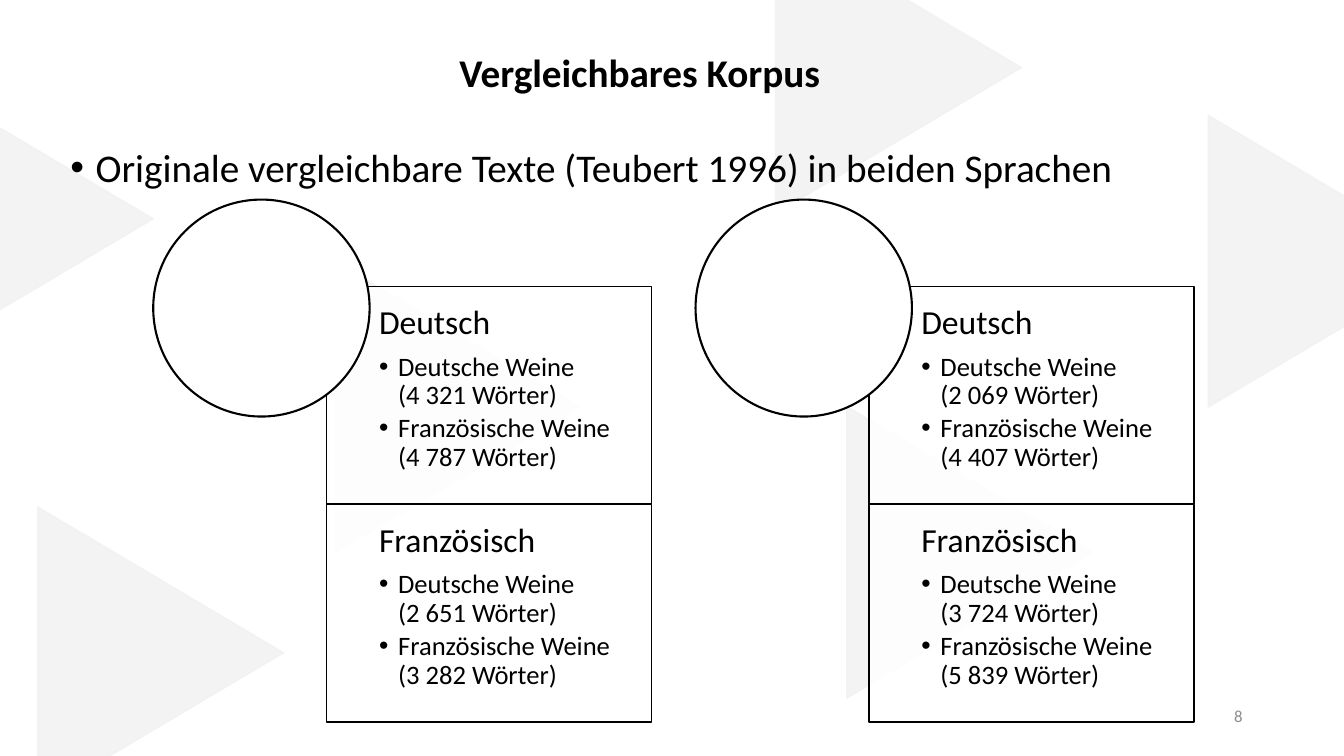
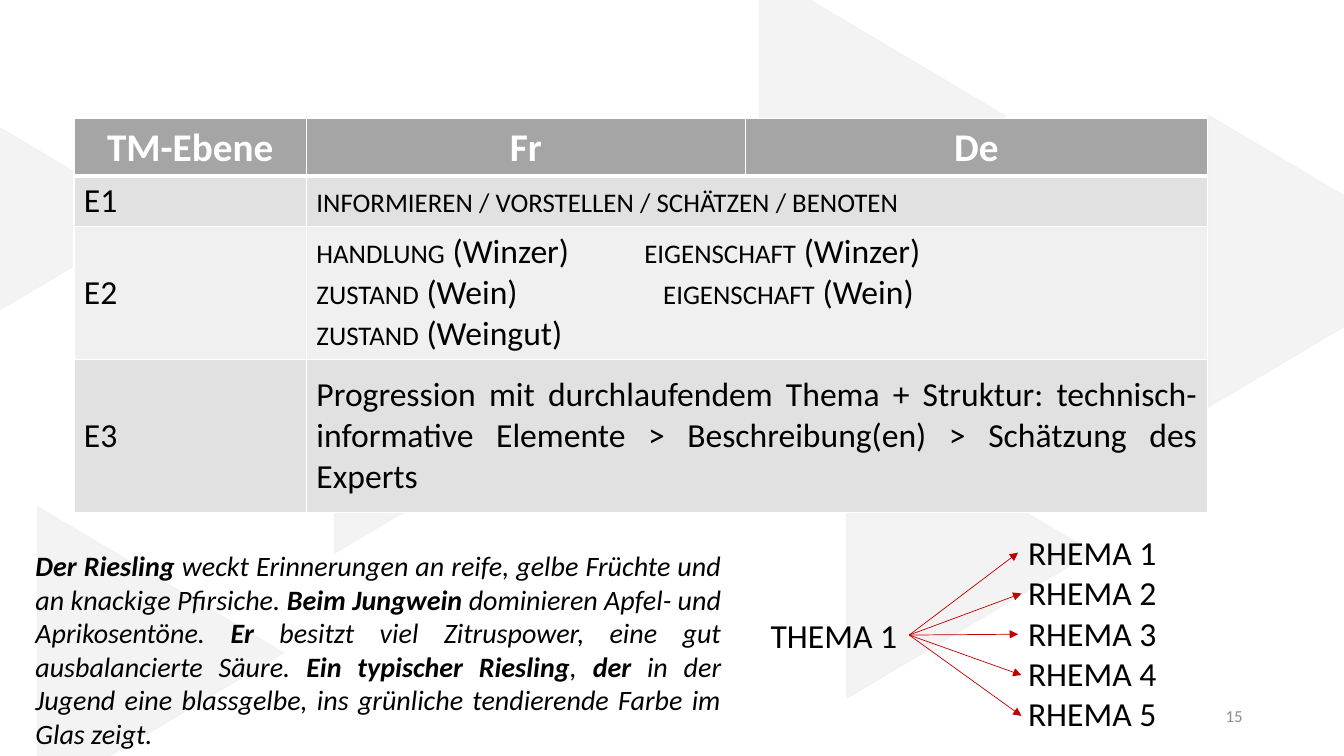
from lxml import etree
from pptx import Presentation
from pptx import util as u
from pptx.dml import color
from pptx.enum import shapes, text
from pptx.oxml import ns

COLORS = {
    "black": "000000",
    "white": "FFFFFF",
    "triangle": "D9D9D9",
    "triangle edge": "F2F2F2",
    "number": "8C8C8C",
    "header": "A5A5A5",
    "dark band": "E1E1E1",
    "light band": "F0F0F0",
    "arrow": "C00000",
}
ALIGN = text.PP_ALIGN
SHAPE = shapes.MSO_SHAPE
TITLE_ONLY, BLANK = 5, 6


def rgb(name):
    return color.RGBColor.from_string(COLORS[name])


def add_xml(parent, tag, **attributes):
    return etree.SubElement(parent, ns.qn(tag), **attributes)


class Deck:
    """Style and current slide; all lengths are percentages of the slide's size."""

    font = "Calibri"
    triangles = [(1.1, 70.1), (61.3, 56.8), (23.2, 37.6), (88.2, 18.3), (-8.6, 12.7)]

    def __init__(self):
        self.presentation = Presentation()
        self.presentation.slide_width = u.Inches(13.33)
        self.presentation.slide_height = u.Inches(7.5)
        self.slide = None

    def x(self, share):
        return u.Emu(round(self.presentation.slide_width * share / 100))

    def y(self, share):
        return u.Emu(round(self.presentation.slide_height * share / 100))

    def area(self, left, top, width, height):
        return self.x(left), self.y(top), self.x(width), self.y(height)

    # Slide with background triangles, number and optional title
    def new_slide(self, number, top_triangle, title=None):
        layout = self.presentation.slide_layouts[TITLE_ONLY if title else BLANK]
        self.slide = self.presentation.slides.add_slide(layout)
        for left, top in [top_triangle, *self.triangles]:
            triangle = self.shape(SHAPE.ISOSCELES_TRIANGLE, (left, top, 21.7, 32.5),
                                  "triangle", "triangle edge", opacity=30)
            triangle.rotation = 90
        self.text_box((70.7, 92.7, 22.5, 5.3), [str(number)], 12, "number", ALIGN.RIGHT)
        if title:
            self.title(title)

    def title(self, wording):
        placeholder = self.slide.shapes.title
        self.slide.shapes._spTree.append(placeholder._element)  # in front of the triangles
        area = self.area(4.5, 5.5, 86.2, 8)
        placeholder.left, placeholder.top, placeholder.width, placeholder.height = area
        frame = placeholder.text_frame
        frame.auto_size = text.MSO_AUTO_SIZE.NONE
        frame.vertical_anchor = text.MSO_ANCHOR.MIDDLE
        self.add_text(frame.paragraphs[0], wording, 28, align=ALIGN.CENTER, bold=True)

    # Text: pieces between asterisks are emphasised, in bold or small capitals
    def add_text(self, paragraph, wording, size, font_color="black", align=ALIGN.LEFT,
                 bold=False, italic=False, small_caps=False):
        paragraph.alignment = align
        for index, piece in enumerate(wording.split("*")):
            if not piece:
                continue
            emphasised = index % 2 == 1
            run = paragraph.add_run()
            run.text = piece
            run.font.name, run.font.size = self.font, u.Pt(size)
            run.font.color.rgb = rgb(font_color)
            run.font.bold = bold or (emphasised and not small_caps)
            run.font.italic = italic
            if emphasised and small_caps:
                run.font._element.set("cap", "small")

    def add_lines(self, frame, lines, *style, **options):
        for index, line in enumerate(lines):
            paragraph = frame.add_paragraph() if index else frame.paragraphs[0]
            self.add_text(paragraph, line, *style, **options)

    def text_box(self, area, lines, *style, **options):
        frame = self.slide.shapes.add_textbox(*self.area(*area)).text_frame
        frame.word_wrap = True
        self.add_lines(frame, lines, *style, **options)
        return frame

    def bullet(self, paragraph, indent):
        properties = paragraph._p.get_or_add_pPr()
        distance = u.Inches(indent)
        properties.set("marL", str(distance))
        properties.set("indent", str(-distance))
        add_xml(properties, "a:buFont", typeface="Arial")
        add_xml(properties, "a:buChar", char="•")

    def tab_stop(self, paragraph, share):
        tabs = add_xml(paragraph._p.get_or_add_pPr(), "a:tabLst")
        add_xml(tabs, "a:tab", pos=str(self.x(share)), algn="l")

    # Shapes and arrows
    def shape(self, kind, area, fill, line, line_width=1, opacity=100):
        shape = self.slide.shapes.add_shape(kind, *self.area(*area))
        shape.shadow.inherit = False
        shape.fill.solid()
        shape.fill.fore_color.rgb = rgb(fill)
        if opacity < 100:
            fill_color = shape._element.spPr.find(ns.qn("a:solidFill"))[0]
            add_xml(fill_color, "a:alpha", val=str(opacity * 1000))
        shape.line.color.rgb = rgb(line)
        shape.line.width = u.Pt(line_width)
        return shape

    def arrow(self, start, end):
        connector = self.slide.shapes.add_connector(
            shapes.MSO_CONNECTOR.STRAIGHT, self.x(start[0]), self.y(start[1]),
            self.x(end[0]), self.y(end[1]))
        connector.line.color.rgb = rgb("arrow")
        connector.line.width = u.Pt(0.5)
        properties = connector._element.spPr
        add_xml(properties.find(ns.qn("a:ln")), "a:tailEnd", type="triangle")
        add_xml(properties, "a:effectLst")

    # Card with a language heading and word counts
    def card(self, area, language, counts):
        card = self.shape(SHAPE.RECTANGLE, area, "white", "black", opacity=90)
        frame = card.text_frame
        frame.word_wrap = True
        frame.vertical_anchor = text.MSO_ANCHOR.TOP
        frame.margin_left = u.Inches(0.52)
        frame.margin_top = frame.margin_right = frame.margin_bottom = u.Inches(0.19)
        self.add_text(frame.paragraphs[0], language, 24)
        for wine, count in zip(("Deutsche", "Französische"), counts):
            words = f"{count:,}".replace(",", chr(160))  # no line break inside a number
            paragraph = frame.add_paragraph()
            self.add_text(paragraph, f"{wine} Weine ({words} Wörter)", 19)
            self.bullet(paragraph, 0.19)
        for index, paragraph in enumerate(frame.paragraphs):
            paragraph.line_spacing = 0.9
            paragraph.space_after = u.Pt(3 if index else 8)

    # Table: header row, then rows of a label and a merged cell
    def table(self, left, top, columns, heights, header, rows):
        area = self.area(left, top, sum(columns), sum(heights))
        table = self.slide.shapes.add_table(len(heights), len(columns), *area).table
        for column, width in zip(table.columns, columns):
            column.width = self.x(width)
        for row, height in zip(table.rows, heights):
            row.height = self.y(height)
        for row_index, row in enumerate(table.rows):
            band = "dark band" if row_index % 2 else "light band"
            for cell in row.cells:
                self.borders(cell, row_index)
                cell.fill.solid()
                cell.fill.fore_color.rgb = rgb(band if row_index else "header")
        for index, wording in enumerate(header):
            self.add_text(table.cell(0, index).text_frame.paragraphs[0], wording, 28,
                          "white", ALIGN.CENTER, bold=True)
        for row_index, (label, lines) in enumerate(rows, 1):
            content = table.cell(row_index, 1)
            content.merge(table.cell(row_index, len(columns) - 1))
            for cell, wording in ((table.cell(row_index, 0), [label]), (content, lines)):
                cell.vertical_anchor = text.MSO_ANCHOR.MIDDLE
                self.add_lines(cell.text_frame, wording, 24, align=ALIGN.JUSTIFY,
                               small_caps=True)
        return table

    def borders(self, cell, row_index):
        properties = cell._tc.get_or_add_tcPr()
        for side in "LRTB":
            below_header = (row_index, side) in ((0, "B"), (1, "T"))
            width = u.Pt(3 if below_header else 1)
            line = add_xml(properties, f"a:ln{side}", w=str(width))
            add_xml(add_xml(line, "a:solidFill"), "a:srgbClr", val=COLORS["white"])


def corpus_slide(deck):
    deck.new_slide(8, (56, -7.3), "Vergleichbares Korpus")
    statement = deck.text_box(
        (4.5, 18.3, 86.2, 8),
        ["Originale vergleichbare Texte (Teubert 1996) in beiden Sprachen"], 28)
    deck.bullet(statement.paragraphs[0], 0.25)

    # Two corpora, each with a circle and one card per language
    corpora = [
        {"Deutsch": (4321, 4787), "Französisch": (2651, 3282)},
        {"Deutsch": (2069, 4407), "Französisch": (3724, 5839)},
    ]
    card_width, card_height, step = 24.2, 28.8, 40.35
    for column, corpus in enumerate(corpora):
        offset = column * step
        for row, (language, counts) in enumerate(corpus.items()):
            top = 37.9 + row * card_height
            deck.card((24.3 + offset, top, card_width, card_height), language, counts)
        deck.shape(SHAPE.OVAL, (11.4 + offset, 26.4, 16.1, 28.7), "white", "black", 1.5)


def levels_slide(deck):
    deck.new_slide(15, (54.8, -0.9))
    table = deck.table(
        5.5, 15.7, (17.3, 32.65, 34.4), (7.5, 6.6, 17.6, 20.3),
        ("TM-Ebene", "Fr", "De"),
        [
            ("E1", ["*informieren / vorstellen / schätzen / benoten*"]),
            ("E2", ["*handlung* (Winzer)\t*eigenschaft* (Winzer)",
                    "*zustand* (Wein)\t*eigenschaft* (Wein)",
                    "*zustand* (Weingut)"]),
            ("E3", ["Progression mit durchlaufendem Thema + Struktur: "
                    "technisch-informative Elemente > Beschreibung(en) > "
                    "Schätzung des Experts"]),
        ])
    for paragraph, stop in zip(table.cell(2, 1).text_frame.paragraphs, (24.4, 25.8)):
        deck.tab_stop(paragraph, stop)

    # Example text
    deck.text_box(
        (1.9, 71.9, 52.5, 28),
        ["*Der Riesling *weckt Erinnerungen an reife, gelbe Früchte und an knackige "
         "Pfirsiche. *Beim Jungwein *dominieren Apfel- und Aprikosentöne. *Er* besitzt "
         "viel Zitruspower, eine gut ausbalancierte Säure. *Ein typischer Riesling*, "
         "*der* in der Jugend eine blassgelbe, ins grünliche tendierende Farbe im "
         "Glas zeigt."],
        20, align=ALIGN.JUSTIFY, italic=True)

    # One theme leading to five rhemes
    deck.text_box((56.6, 80.7, 11.5, 6.7), ["THEMA 1"], 24)
    deck.text_box((75.75, 69.7, 12, 28.2), [f"RHEMA {n}" for n in range(1, 6)], 24)
    for index, tip in enumerate((75.75, 76, 75.75, 76, 76)):
        deck.arrow((67.65, 84), (tip, 73.1 + index * 5.4))


def main():
    deck = Deck()
    corpus_slide(deck)
    levels_slide(deck)
    deck.presentation.save("out.pptx")


if __name__ == "__main__":
    main()
